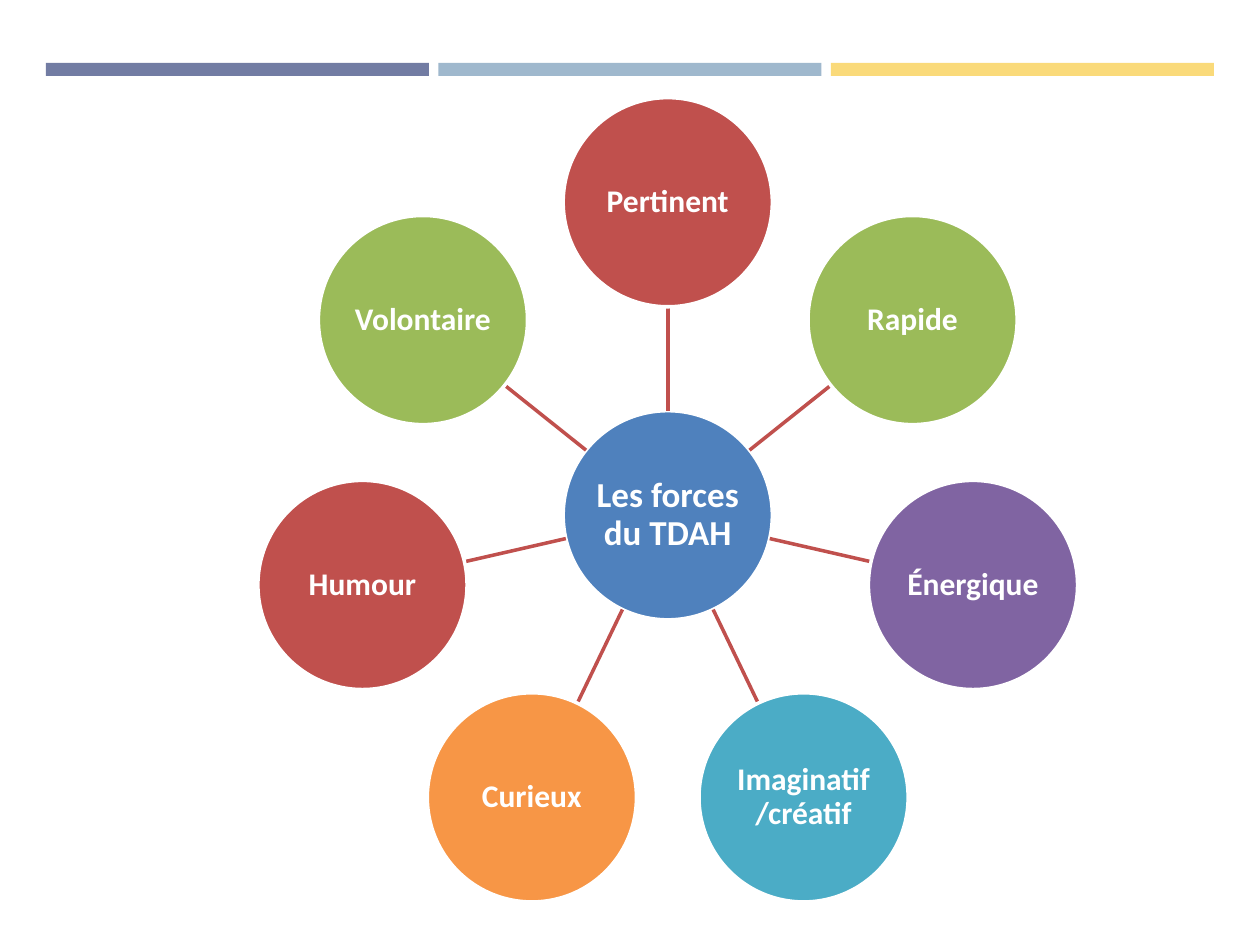
from math import cos, pi, sin

from pptx import Presentation
from pptx.dml.color import RGBColor
from pptx.enum.shapes import MSO_CONNECTOR, MSO_SHAPE
from pptx.enum.text import MSO_ANCHOR, PP_ALIGN
from pptx.oxml.xmlchemy import OxmlElement
from pptx.util import Inches, Pt

HUES = {
    "slate": "727CA3", "mist": "9FB8CD", "sand": "FADA7A",
    "blue": "4F81BD", "red": "C0504D", "green": "9BBB59",
    "plum": "8064A2", "teal": "4BACC6", "gold": "F79646",
    "white": "FFFFFF",
}
COLS, ROWS = 100, 75
MID = (53, 40.9)
SIZE = 16.6
ORBIT = 24.85
FORCES = [
    ("Pertinent", "red"), ("Rapide", "green"), ("Énergique", "plum"),
    ("Imaginatif/créatif", "teal"), ("Curieux", "gold"),
    ("Humour", "red"), ("Volontaire", "green"),
]


class Board:
    font = "Calibri"
    stroke = Pt(2)
    inset = Inches(0.01)

    def __init__(self, deck):
        self.slide = deck.slides.add_slide(deck.slide_layouts[6])
        self.col = deck.slide_width / COLS
        self.row = deck.slide_height / ROWS

    def hue(self, name):
        return RGBColor.from_string(HUES[name])

    def place(self, x, y):
        return round(x * self.col), round(y * self.row)

    def shape(self, kind, x, y, wide, high, hue):
        item = self.slide.shapes.add_shape(
            kind, *self.place(x, y), *self.place(wide, high))
        item.shadow.inherit = False
        item.fill.solid()
        item.fill.fore_color.rgb = self.hue(hue)
        return item

    def bar(self, x, y, wide, high, hue):
        item = self.shape(MSO_SHAPE.RECTANGLE, x, y, wide, high, hue)
        item.line.fill.background()

    def disc(self, x, y, text, hue, size):
        item = self.shape(MSO_SHAPE.OVAL, x - SIZE / 2, y - SIZE / 2,
                          SIZE, SIZE, hue)
        item.line.color.rgb = self.hue("white")
        item.line.width = self.stroke
        frame = item.text_frame
        frame.text = text
        frame.word_wrap = True
        frame.vertical_anchor = MSO_ANCHOR.MIDDLE
        frame.margin_left = frame.margin_right = self.inset
        frame.margin_top = frame.margin_bottom = self.inset
        para = frame.paragraphs[0]
        para.alignment = PP_ALIGN.CENTER
        para.line_spacing = 0.9
        font = para.runs[0].font
        font.name = self.font
        font.size = Pt(size)
        font.bold = True
        font.color.rgb = self.hue("white")

    def spoke(self, start, end, hue):
        item = self.slide.shapes.add_connector(
            MSO_CONNECTOR.STRAIGHT, *self.place(*start), *self.place(*end))
        item.line.color.rgb = self.hue(hue)
        item.line.width = self.stroke
        item._element.spPr.append(OxmlElement("a:effectLst"))


def polar(reach, turn):
    return MID[0] + reach * sin(turn), MID[1] - reach * cos(turn)


def main():
    deck = Presentation()
    deck.slide_width, deck.slide_height = Inches(10), Inches(7.5)
    board = Board(deck)
    for i, hue in enumerate(("slate", "mist", "sand")):
        board.bar(3.65 + 31.15 * i, 5, 30.4, 1.03, hue)
    board.disc(*MID, "Les forces du TDAH", "blue", 20)
    for i, (text, hue) in enumerate(FORCES):
        turn = 2 * pi * i / len(FORCES)
        board.spoke(polar(SIZE / 2, turn),
                    polar(ORBIT - SIZE / 2, turn), "red")
        board.disc(*polar(ORBIT, turn), text, hue, 18)
    deck.save("out.pptx")


if __name__ == "__main__":
    main()
